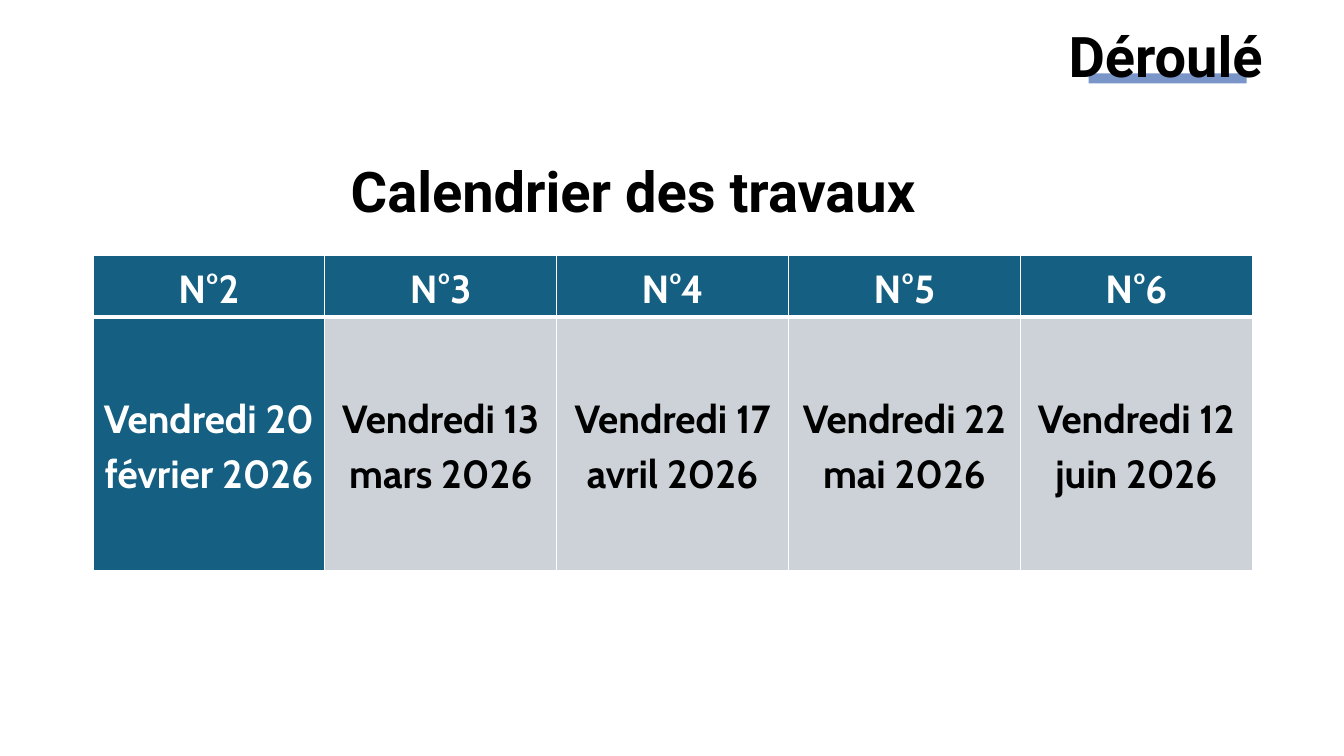
import pptx
import pptx.util
import pptx.dml.color
import pptx.enum.shapes
import pptx.enum.text
import pptx.oxml.ns
import lxml.etree

Pt = pptx.util.Pt
RGB = pptx.dml.color.RGBColor.from_string
COLORS = {
    "black": "000000",
    "white": "FFFFFF",
    "teal": "156082",
    "grey": "CCD2D8",
    "underline": "7A95C8",
}


def write(frame, text, font="Roboto", size=40, color="black", line=None, after=None):
    frame.word_wrap = True
    paragraph = frame.paragraphs[0]
    paragraph.alignment = pptx.enum.text.PP_ALIGN.CENTER
    paragraph.line_spacing = line
    paragraph.space_after = after
    run = paragraph.add_run()
    run.text = text
    run.font.name = font
    run.font.size = Pt(size)
    run.font.bold = True
    run.font.color.rgb = RGB(COLORS[color])


def add_border(cell, side, width):
    edge = lxml.etree.SubElement(
        cell._tc.get_or_add_tcPr(), pptx.oxml.ns.qn(f"a:ln{side}"), w=str(Pt(width))
    )
    fill = lxml.etree.SubElement(edge, pptx.oxml.ns.qn("a:solidFill"))
    lxml.etree.SubElement(fill, pptx.oxml.ns.qn("a:srgbClr"), val=COLORS["white"])


deck = pptx.Presentation()
deck.slide_width = Pt(960)
deck.slide_height = Pt(540)
slide = deck.slides.add_slide(deck.slide_layouts[6])

underline = slide.shapes.add_shape(
    pptx.enum.shapes.MSO_SHAPE.RECTANGLE, Pt(777.6), Pt(52.5), Pt(113), Pt(7.2)
)
underline.shadow.inherit = False
underline.fill.solid()
underline.fill.fore_color.rgb = RGB(COLORS["underline"])
underline.line.fill.background()

section = slide.shapes.add_textbox(Pt(730), Pt(11.5), Pt(205.2), Pt(55.4))
write(section.text_frame, "Déroulé")

heading = slide.shapes.add_textbox(Pt(25.2), Pt(108), Pt(854), Pt(55.4))
write(heading.text_frame, "Calendrier des travaux")

sessions = [
    ("N°2", "Vendredi 20 février 2026"),
    ("N°3", "Vendredi 13 mars 2026"),
    ("N°4", "Vendredi 17 avril 2026"),
    ("N°5", "Vendredi 22 mai 2026"),
    ("N°6", "Vendredi 12 juin 2026"),
]
calendar = slide.shapes.add_table(
    2, len(sessions), Pt(66.4), Pt(182.2), Pt(828), Pt(225.4)
).table
calendar.rows[0].height = Pt(44)
calendar.rows[1].height = Pt(181.4)

for column, session in enumerate(sessions):
    calendar.columns[column].width = Pt(165.6)
    for row, label in enumerate(session):
        cell = calendar.cell(row, column)
        dark = row == 0 or column == 0
        cell.margin_left = cell.margin_right = Pt(3.6)
        cell.margin_top = cell.margin_bottom = 0
        cell.vertical_anchor = pptx.enum.text.MSO_ANCHOR.MIDDLE
        for side, width in zip("LRTB", (1, 1, (1, 3)[row], (3, 1)[row])):
            add_border(cell, side, width)
        cell.fill.solid()
        cell.fill.fore_color.rgb = RGB(COLORS["teal" if dark else "grey"])
        write(
            cell.text_frame,
            label,
            font="Cabin",
            size=28,
            color="white" if dark else "black",
            line=1.15,
            after=Pt(8),
        )

deck.save("out.pptx")
